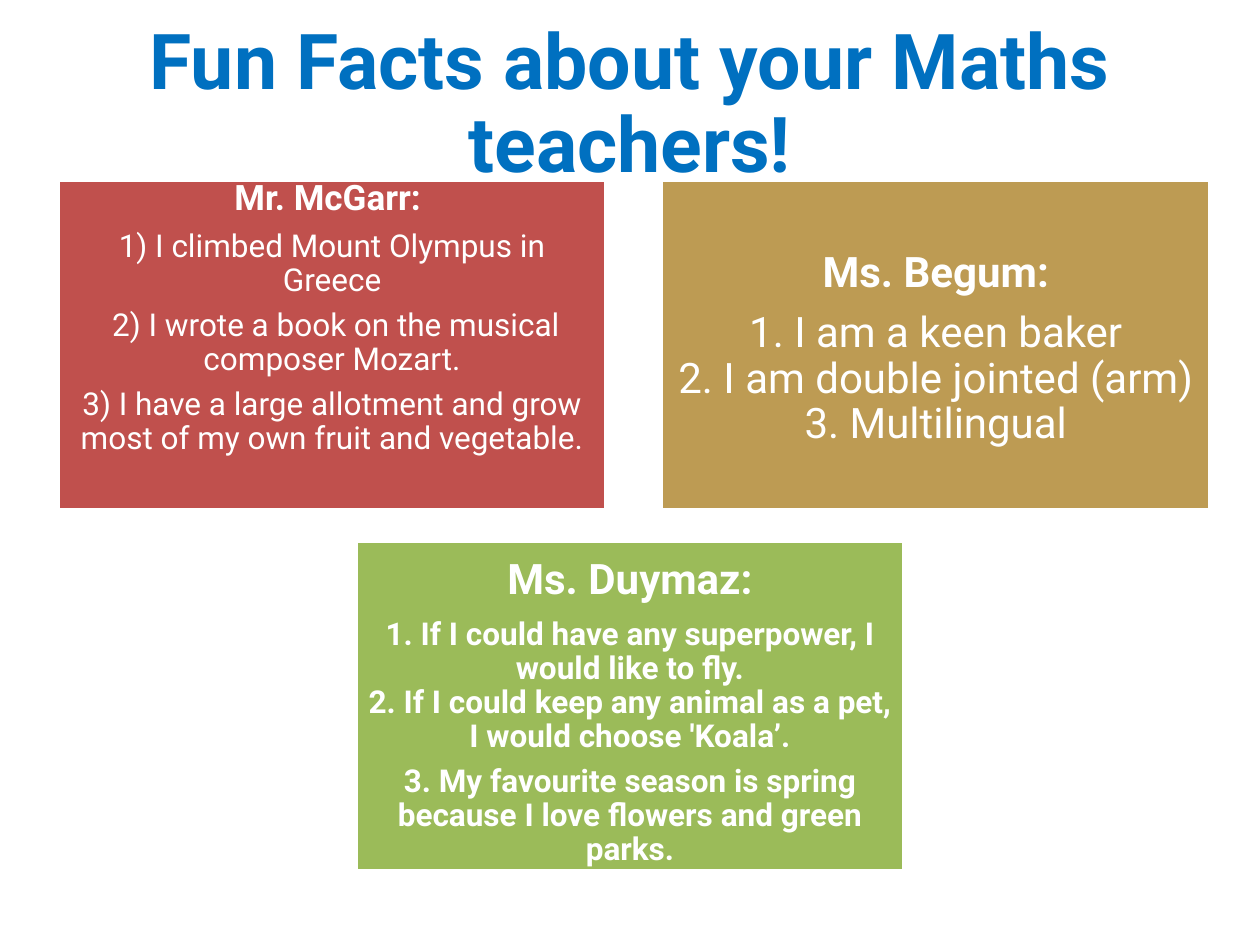
"""Build a slide of fun facts about three maths teachers."""
from dataclasses import dataclass

from pptx import Presentation
from pptx.dml.color import RGBColor as Rgb
from pptx.enum.shapes import MSO_SHAPE as Preset
from pptx.enum.text import MSO_ANCHOR as Anchor, MSO_AUTO_SIZE as AutoSize, PP_ALIGN as Align
from pptx.util import Cm, Pt


@dataclass(frozen=True)
class Theme:
    font: str = "Roboto"
    blue: str = "0070C0"
    red: str = "C0504D"
    gold: str = "BD9B53"
    green: str = "9BBB59"
    white: str = "FFFFFF"
    title: int = 44
    large: int = 24
    medium: int = 20
    small: int = 18


def apply_format(target, values):
    for name, value in values.items():
        setattr(target, name, value)


def write_paragraph(paragraph, text, size, bold, color, gap=0):
    paragraph.text = text
    apply_format(paragraph, {"alignment": Align.CENTER, "line_spacing": 0.9,
                             "space_before": Pt(0), "space_after": Pt(gap * size)})
    for run in paragraph.runs:
        apply_format(run.font, {"name": theme.font, "size": Pt(size), "bold": bold})
        run.font.color.rgb = Rgb.from_string(color)


theme = Theme()
deck = Presentation()
apply_format(deck, {"slide_width": Cm(25.4), "slide_height": Cm(19.05)})
slide = deck.slides.add_slide(deck.slide_layouts[5])

heading = slide.shapes.title
apply_format(heading, {"left": Cm(1.75), "top": Cm(0.3), "width": Cm(21.9), "height": Cm(3.68)})
apply_format(heading.text_frame, {"word_wrap": True, "auto_size": AutoSize.NONE,
                                  "vertical_anchor": Anchor.MIDDLE})
write_paragraph(heading.text_frame.paragraphs[0], "Fun Facts about your Maths teachers!",
                theme.title, True, theme.blue)

card_width, card_height = Cm(11.05), Cm(6.63)
upper_row, lower_row = Cm(3.64), Cm(10.92)
centred_left = (deck.slide_width - card_width) // 2

teachers = [
    (Cm(1.17), upper_row, theme.red, 0.2, 0, [
        ("Mr. McGarr: ", theme.medium, True),
        ("1) I climbed Mount Olympus in Greece", theme.small, False),
        (" 2) I wrote a book on the musical composer Mozart.", theme.small, False),
        ("3) I have a large allotment and grow most of my own fruit and vegetable.",
         theme.small, False),
    ]),
    (Cm(13.34), upper_row, theme.gold, 0.25, 1.43, [
        ("Ms. Begum:", theme.large, True),
        ("1. I am a keen baker\v2. I am double jointed (arm)\v3. Multilingual",
         theme.large, False),
    ]),
    (centred_left, lower_row, theme.green, 0.25, 0.34, [
        ("Ms. Duymaz:", theme.large, True),
        ("1. If I could have any superpower, I would like to fly.\v"
         "2. If I could keep any animal as a pet, I would choose 'Koala’.", theme.small, True),
        ("3. My favourite season is spring because I love flowers and green parks.",
         theme.small, True),
    ]),
]

for left, top, color, side_inset, top_inset, facts in teachers:
    card = slide.shapes.add_shape(Preset.RECTANGLE, left, top, card_width, card_height)
    card.shadow.inherit = False
    card.fill.solid()
    card.fill.fore_color.rgb = Rgb.from_string(color)
    card.line.color.rgb = Rgb.from_string(theme.white)
    card.line.width = Pt(2)
    frame = card.text_frame
    apply_format(frame, {"word_wrap": True, "vertical_anchor": Anchor.TOP,
                         "margin_left": Cm(side_inset), "margin_right": Cm(side_inset),
                         "margin_top": Cm(top_inset), "margin_bottom": Cm(0)})
    for index, (text, size, bold) in enumerate(facts):
        paragraph = frame.add_paragraph() if index else frame.paragraphs[0]
        write_paragraph(paragraph, text, size, bold, theme.white, gap=0.35)

deck.save("out.pptx")
